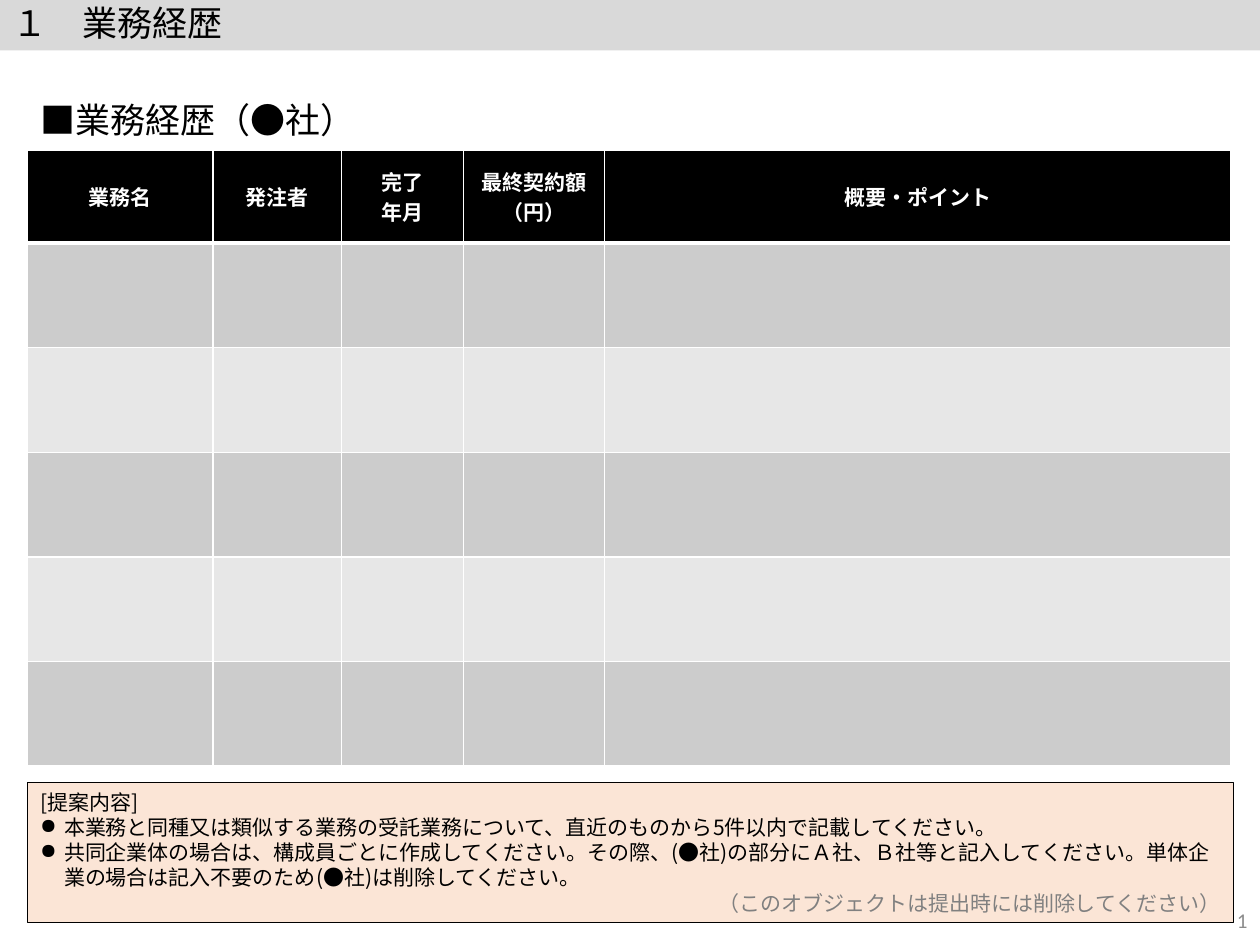
from lxml import etree
from pptx import Presentation
from pptx.dml.color import RGBColor
from pptx.enum.shapes import MSO_SHAPE
from pptx.enum.text import MSO_ANCHOR, MSO_AUTO_SIZE, PP_ALIGN
from pptx.oxml.ns import qn
from pptx.util import Inches, Pt

LEFT, CENTER, RIGHT = PP_ALIGN.LEFT, PP_ALIGN.CENTER, PP_ALIGN.RIGHT
MIDDLE = MSO_ANCHOR.MIDDLE
FIXED, GROW = MSO_AUTO_SIZE.NONE, MSO_AUTO_SIZE.SHAPE_TO_FIT_TEXT

BLACK = RGBColor(0x00, 0x00, 0x00)
WHITE = RGBColor(0xFF, 0xFF, 0xFF)
BAR_GRAY = RGBColor(0xD9, 0xD9, 0xD9)
BAND_DARK = RGBColor(0xCC, 0xCC, 0xCC)
BAND_LIGHT = RGBColor(0xE7, 0xE7, 0xE7)
NOTE_PEACH = RGBColor(0xFB, 0xE5, 0xD6)
NOTE_GRAY = RGBColor(0x80, 0x80, 0x80)
PAGE_GRAY = RGBColor(0x8C, 0x8C, 0x8C)
JAPANESE = "Noto Sans CJK JP"

MARGIN = Inches(0.22)
BAR_HEIGHT = Inches(0.4)


def style(paragraph, size, color, align=LEFT, bold=False):
    """Format every run of a paragraph, for Latin and East Asian text."""
    paragraph.alignment = align
    for run in paragraph.runs:
        for key, value in {"name": JAPANESE, "size": Pt(size), "bold": bold}.items():
            setattr(run.font, key, value)
        run.font.color.rgb = color
        east_asian = etree.SubElement(run.font._element, qn("a:ea"))
        east_asian.set("typeface", JAPANESE)


def set_borders(cell, bottom_width):
    """Draw white lines round a cell; they must precede its fill."""
    properties = cell._tc.get_or_add_tcPr()
    for side, width in {"L": 1, "R": 1, "T": 1, "B": bottom_width}.items():
        line = etree.SubElement(properties, qn(f"a:ln{side}"), w=str(Pt(width)))
        fill = etree.SubElement(line, qn("a:solidFill"))
        etree.SubElement(fill, qn("a:srgbClr"), val=str(WHITE))


prs = Presentation()
prs.slide_width, prs.slide_height = Inches(10), Inches(7.5)
slide = prs.slides.add_slide(prs.slide_layouts[5])

# Page number
page_width = Inches(2.25)
page = slide.shapes.add_textbox(prs.slide_width - page_width, Inches(7.1), page_width, BAR_HEIGHT)
page.text_frame.word_wrap = True
page.text_frame.vertical_anchor = MIDDLE
page_line = page.text_frame.paragraphs[0]
page_line.alignment = RIGHT
page_run = page_line.add_run()
page_run.text = "1"
page_run.font.name, page_run.font.size = "Calibri", Pt(12)
page_run.font.color.rgb = PAGE_GRAY
# Turn the run into a slide number field
page_run._r.tag = qn("a:fld")
page_run._r.set("id", "{B6F15528-21DE-4FAA-801E-634DDDAF4B2B}")
page_run._r.set("type", "slidenum")

# Title bar and section heading
title = slide.shapes.title
title.left, title.top, title.width, title.height = 0, 0, prs.slide_width, BAR_HEIGHT
title.fill.solid()
title.fill.fore_color.rgb = BAR_GRAY
heading = slide.shapes.add_textbox(MARGIN, Inches(0.77), Inches(3.06), BAR_HEIGHT)
for box, words in ((title, "１　業務経歴"), (heading, "■業務経歴（●社）")):
    frame = box.text_frame
    frame.text = words
    for key, value in {"word_wrap": True, "auto_size": FIXED, "vertical_anchor": MIDDLE}.items():
        setattr(frame, key, value)
    frame.paragraphs[0].line_spacing = 0.9
    style(frame.paragraphs[0], 20, BLACK)

# Work history table
columns = {"業務名": 1.47, "発注者": 1.02, "完了\n年月": 0.97,
           "最終契約額（円）": 1.12, "概要・ポイント": 4.97}
row_heights = [0.74] + [0.83] * 5
history = slide.shapes.add_table(
    len(row_heights), len(columns), MARGIN, Inches(1.19),
    Inches(sum(columns.values())), Inches(sum(row_heights))).table
for column, width in zip(history.columns, columns.values()):
    column.width = Inches(width)
for row_number, height in enumerate(row_heights):
    history.rows[row_number].height = Inches(height)
    is_header = row_number == 0
    band = BLACK if is_header else (BAND_LIGHT, BAND_DARK)[row_number % 2]
    for column_number, label in enumerate(columns):
        cell = history.cell(row_number, column_number)
        set_borders(cell, 3 if is_header else 1)
        cell.fill.solid()
        cell.fill.fore_color.rgb = band
        if is_header:
            cell.text = label
            cell.vertical_anchor = MIDDLE
            for paragraph in cell.text_frame.paragraphs:
                style(paragraph, 12, WHITE, CENTER, True)

# Instruction note
note = slide.shapes.add_shape(MSO_SHAPE.RECTANGLE, MARGIN, Inches(6.21), Inches(9.57), Inches(1.11))
note.shadow.inherit = False
note.fill.solid()
note.fill.fore_color.rgb = NOTE_PEACH
note.line.color.rgb = BLACK
note.line.width = Pt(0.75)
frame = note.text_frame
for key, value in {"word_wrap": True, "auto_size": GROW, "vertical_anchor": MIDDLE}.items():
    setattr(frame, key, value)
instructions = [
    ("[提案内容]", False, BLACK, LEFT),
    ("本業務と同種又は類似する業務の受託業務について、直近のものから5件以内で記載してください。",
     True, BLACK, LEFT),
    ("共同企業体の場合は、構成員ごとに作成してください。その際、(●社)の部分にＡ社、Ｂ社等と記入してください。"
     "単体企業の場合は記入不要のため(●社)は削除してください。", True, BLACK, LEFT),
    ("（このオブジェクトは提出時には削除してください）", False, NOTE_GRAY, RIGHT),
]
frame.text = "\n".join(words for words, *_ in instructions)
for paragraph, (_, bulleted, color, align) in zip(frame.paragraphs, instructions):
    if bulleted:
        properties = paragraph._p.get_or_add_pPr()
        properties.set("marL", str(Inches(0.19)))
        properties.set("indent", str(-Inches(0.19)))
        etree.SubElement(properties, qn("a:buChar"), char="●")
    paragraph.line_spacing = Pt(14.4)
    style(paragraph, 12, color, align)

prs.save("out.pptx")
